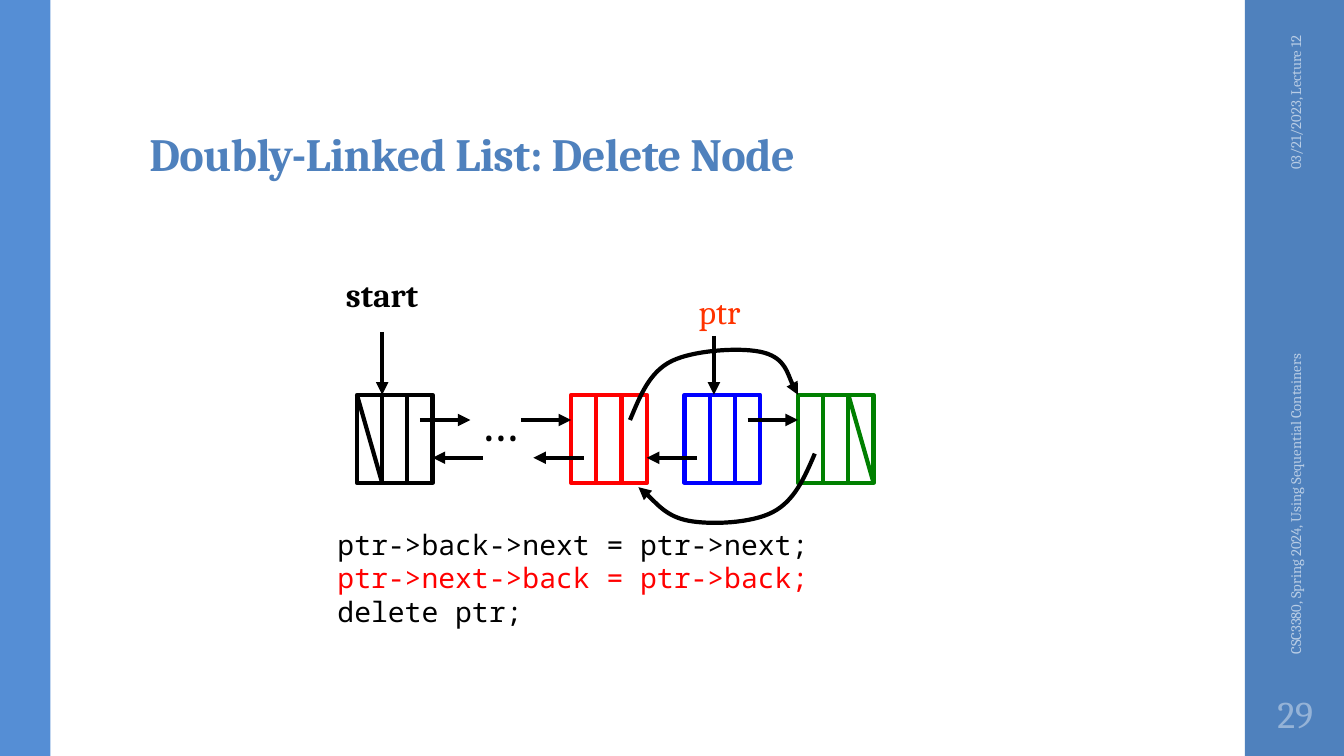
from dataclasses import dataclass

from lxml import etree
from pptx import Presentation
from pptx.dml.color import RGBColor
from pptx.enum.shapes import MSO_CONNECTOR, MSO_SHAPE
from pptx.enum.text import MSO_ANCHOR, MSO_AUTO_SIZE, PP_ALIGN
from pptx.oxml.ns import qn
from pptx.util import Pt

RECTANGLE = MSO_SHAPE.RECTANGLE
STRAIGHT = MSO_CONNECTOR.STRAIGHT
TOP, MIDDLE, BOTTOM = MSO_ANCHOR.TOP, MSO_ANCHOR.MIDDLE, MSO_ANCHOR.BOTTOM
LEFT, CENTER, RIGHT = PP_ALIGN.LEFT, PP_ALIGN.CENTER, PP_ALIGN.RIGHT

BLACK = RGBColor(0x00, 0x00, 0x00)
WHITE = RGBColor(0xFF, 0xFF, 0xFF)
RED = RGBColor(0xFF, 0x00, 0x00)
BLUE = RGBColor(0x00, 0x00, 0xFF)
GREEN = RGBColor(0x00, 0x80, 0x00)
ORANGE = RGBColor(0xFF, 0x33, 0x00)
ACCENT = RGBColor(0x4F, 0x81, 0xBD)
LEFT_BAR = RGBColor(0x55, 0x8E, 0xD5)
FOOTER = RGBColor(0xB9, 0xCD, 0xE5)
PAGE_NUMBER = RGBColor(0x95, 0xB3, 0xD7)

SERIF, MONO = "Cambria", "Noto Sans Mono"
NODE_TOP, NODE_HEIGHT, CELL_WIDTH = 282, 63, 18
NODE_BOTTOM = NODE_TOP + NODE_HEIGHT
NEXT_Y, BACK_Y, LINK_LENGTH = 300, 327, 36
STROKE = 3

Point = tuple[float, float]
Box = tuple[float, float, float, float]


@dataclass(frozen=True)
class ListNode:
    left: float
    color: RGBColor
    null_cell: int | None = None


@dataclass(frozen=True)
class Label:
    text: str
    box: Box
    size: float
    color: RGBColor
    bold: bool = False
    align: PP_ALIGN = LEFT
    anchor: MSO_ANCHOR = TOP
    rotation: float = 0
    side_inset: float = 7.2


LIST_NODES = (
    ListNode(255, BLACK, null_cell=0),
    ListNode(408, RED),
    ListNode(489, BLUE),
    ListNode(570, GREEN, null_cell=2),
)
NEXT_LINK_STARTS = (300, 372, 534)
BACK_LINK_ENDS = (309, 381, 462)
POINTER_ARROWS = (((273, 237), (273, NODE_TOP)), ((510, 240), (510, NODE_TOP)))
BYPASS_LINKS = (
    ((450, 300), (457.2, 283), (463.7, 265.7), (480, 257.8), (496, 250),
     (531, 247.7), (546, 252), (561, 256.3), (566, 277), (570, 282)),
    ((582, 324), (574.6, 341.3), (567.4, 357.8), (552, 365.8), (537, 373.7),
     (508, 375), (492, 372), (476, 369), (462, 352), (456, 348)),
)
LABELS = (
    Label("03/21/2023, Lecture 12", (850.3, 78.5, 149.8, 28.8), 10.5, FOOTER,
          align=RIGHT, anchor=MIDDLE, rotation=270),
    Label("CSC3380, Spring 2024, Using Sequential Containers",
          (784.1, 319, 282.2, 28.8), 10.5, FOOTER, anchor=MIDDLE, rotation=270),
    Label("29", (889.2, 486, 72, 46.8), 27, PAGE_NUMBER,
          align=CENTER, anchor=MIDDLE, side_inset=3.6),
    Label("start", (240, 192, 123, 54), 24, BLACK, bold=True),
    Label("…", (336, 276, 45, 36), 36, BLACK),
    Label("ptr", (492, 204, 108, 36), 24, ORANGE),
)
CODE_LINES = (
    ("ptr->back->next = ptr->next;", BLACK),
    ("ptr->next->back = ptr->back;", RED),
    ("delete ptr;", BLACK),
)


def write_text(frame, lines, *, size: float, font: str = SERIF, bold: bool = False,
               align: PP_ALIGN = LEFT, anchor: MSO_ANCHOR = TOP,
               side_inset: float = 7.2, top_inset: float = 3.6,
               line_spacing: float = 1.0, tracking: int = 0) -> None:
    frame.word_wrap = True
    frame.auto_size = MSO_AUTO_SIZE.NONE
    frame.vertical_anchor = anchor
    frame.margin_left = frame.margin_right = Pt(side_inset)
    frame.margin_top, frame.margin_bottom = Pt(top_inset), Pt(3.6)
    for index, (text, color) in enumerate(lines):
        paragraph = frame.add_paragraph() if index else frame.paragraphs[0]
        paragraph.alignment = align
        paragraph.line_spacing = line_spacing
        run = paragraph.add_run()
        run.text = text
        run.font.name, run.font.size, run.font.bold = font, Pt(size), bold
        run.font.color.rgb = color
        if tracking:
            run.font.element.set("spc", str(tracking)) if hasattr(run.font, "element") \
                else run._r.get_or_add_rPr().set("spc", str(tracking))


def add_rectangle(shapes, box: Box, fill: RGBColor, outline: RGBColor | None = None) -> None:
    rectangle = shapes.add_shape(RECTANGLE, *map(Pt, box))
    rectangle.shadow.inherit = False
    rectangle.fill.solid()
    rectangle.fill.fore_color.rgb = fill
    if outline is None:
        rectangle.line.fill.background()
    else:
        style_stroke(rectangle, outline)


def style_stroke(stroke, color: RGBColor, arrow: bool = False) -> None:
    stroke.line.color.rgb = color
    stroke.line.width = Pt(STROKE)
    if arrow:
        outline = stroke.element.find(".//" + qn("a:ln"))
        etree.SubElement(outline, qn("a:tailEnd"), type="triangle")


def add_line(shapes, start: Point, end: Point, color: RGBColor = BLACK,
             arrow: bool = False) -> None:
    line = shapes.add_connector(STRAIGHT, *map(Pt, start + end))
    style_stroke(line, color, arrow)
    etree.SubElement(line.element.find(qn("p:spPr")), qn("a:effectLst"))


def add_node(shapes, node: ListNode) -> None:
    add_rectangle(shapes, (node.left, NODE_TOP, 3 * CELL_WIDTH, NODE_HEIGHT),
                  WHITE, node.color)
    for cell in (1, 2):
        divider = node.left + cell * CELL_WIDTH
        add_line(shapes, (divider, NODE_TOP), (divider, NODE_BOTTOM), node.color)
    if node.null_cell is not None:
        cell_left = node.left + node.null_cell * CELL_WIDTH
        add_line(shapes, (cell_left, NODE_TOP),
                 (cell_left + CELL_WIDTH, NODE_BOTTOM), node.color)


def add_curved_arrow(shapes, points: tuple[Point, ...]) -> None:
    start, *controls = [(Pt(x), Pt(y)) for x, y in points]
    builder = shapes.build_freeform(*start)
    builder.add_line_segments(controls, close=False)
    curve = builder.convert_to_shape()
    curve.shadow.inherit = False
    curve.fill.background()
    style_stroke(curve, BLACK, arrow=True)
    segments = list(curve.element.iter(qn("a:lnTo")))
    outline = segments[0].getparent()
    for first in range(0, len(segments), 3):
        bezier = etree.SubElement(outline, qn("a:cubicBezTo"))
        for segment in segments[first:first + 3]:
            bezier.append(segment[0])
            outline.remove(segment)


def add_label(shapes, label: Label) -> None:
    box = shapes.add_textbox(*map(Pt, label.box))
    box.rotation = label.rotation
    write_text(box.text_frame, [(label.text, label.color)], size=label.size,
               bold=label.bold, align=label.align, anchor=label.anchor,
               side_inset=label.side_inset)


def main() -> None:
    deck = Presentation()
    deck.slide_width, deck.slide_height = Pt(960), Pt(540)
    shapes = deck.slides.add_slide(deck.slide_layouts[5]).shapes

    add_rectangle(shapes, (889.2, 0, 70.8, 540), ACCENT)
    add_rectangle(shapes, (0, 0, 36, 540), LEFT_BAR)

    title = shapes.title
    title.left, title.top, title.width, title.height = map(Pt, (99.4, 23, 763.2, 110.2))
    write_text(title.text_frame, [("Doubly-Linked List: Delete Node", ACCENT)], size=33,
               bold=True, anchor=BOTTOM, top_inset=2.16, line_spacing=0.9, tracking=-40)

    for node in LIST_NODES:
        add_node(shapes, node)
    for x in NEXT_LINK_STARTS:
        add_line(shapes, (x, NEXT_Y), (x + LINK_LENGTH, NEXT_Y), arrow=True)
    for x in BACK_LINK_ENDS:
        add_line(shapes, (x + LINK_LENGTH, BACK_Y), (x, BACK_Y), arrow=True)
    for start, end in POINTER_ARROWS:
        add_line(shapes, start, end, arrow=True)
    for points in BYPASS_LINKS:
        add_curved_arrow(shapes, points)
    for label in LABELS:
        add_label(shapes, label)

    code = shapes.add_textbox(*map(Pt, (234, 373, 360, 80)))
    write_text(code.text_frame, CODE_LINES, size=20, font=MONO)
    deck.save("out.pptx")


if __name__ == "__main__":
    main()
